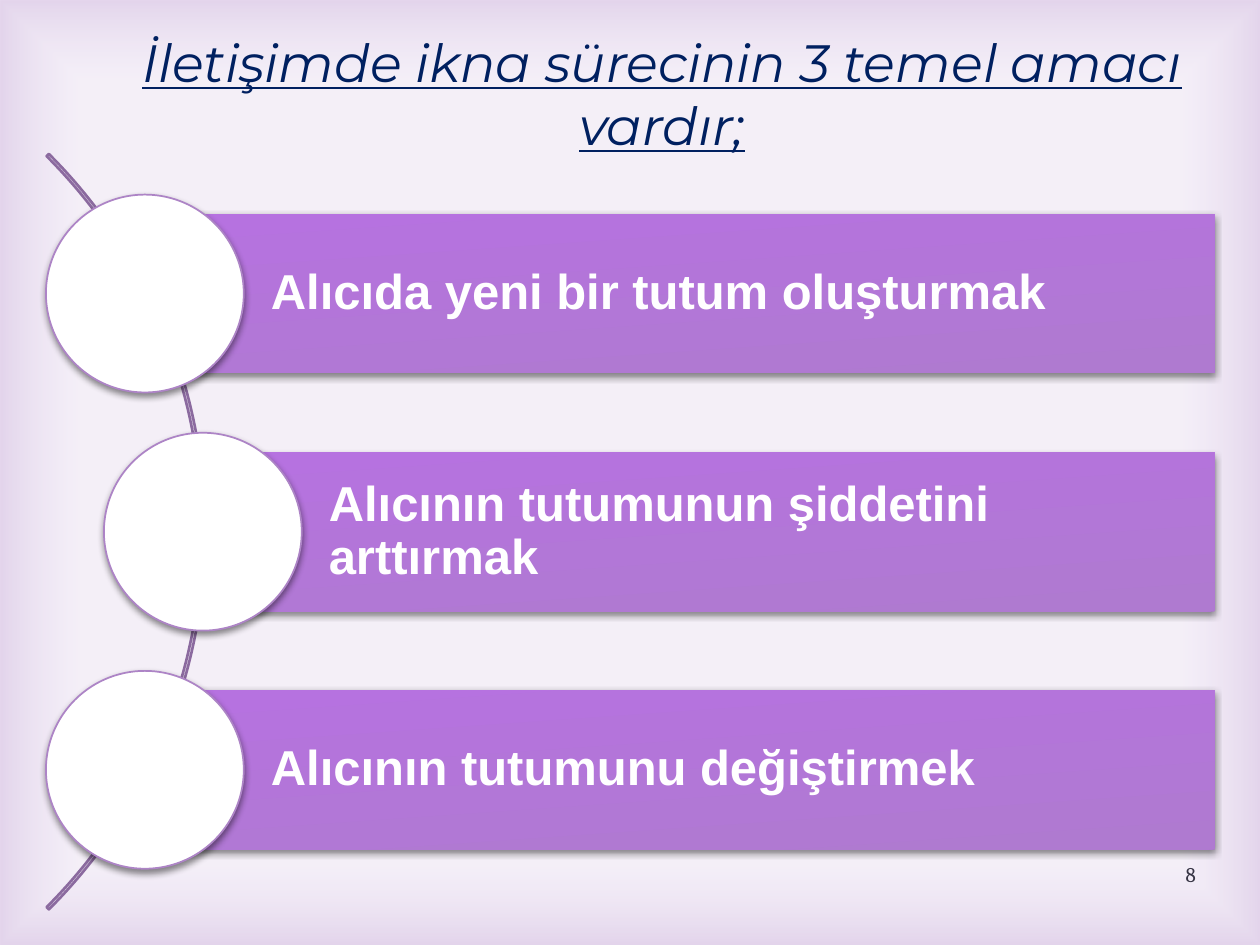
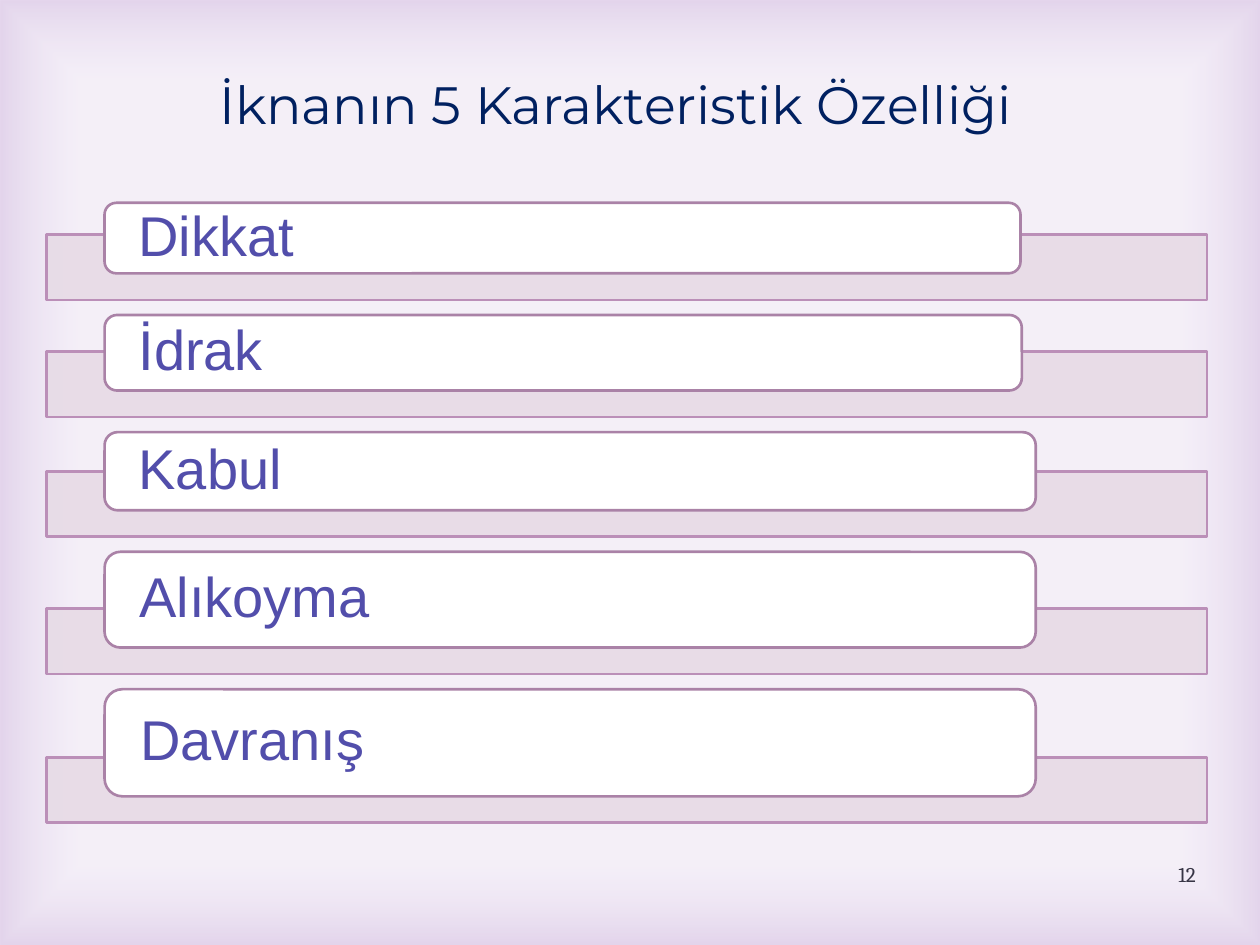
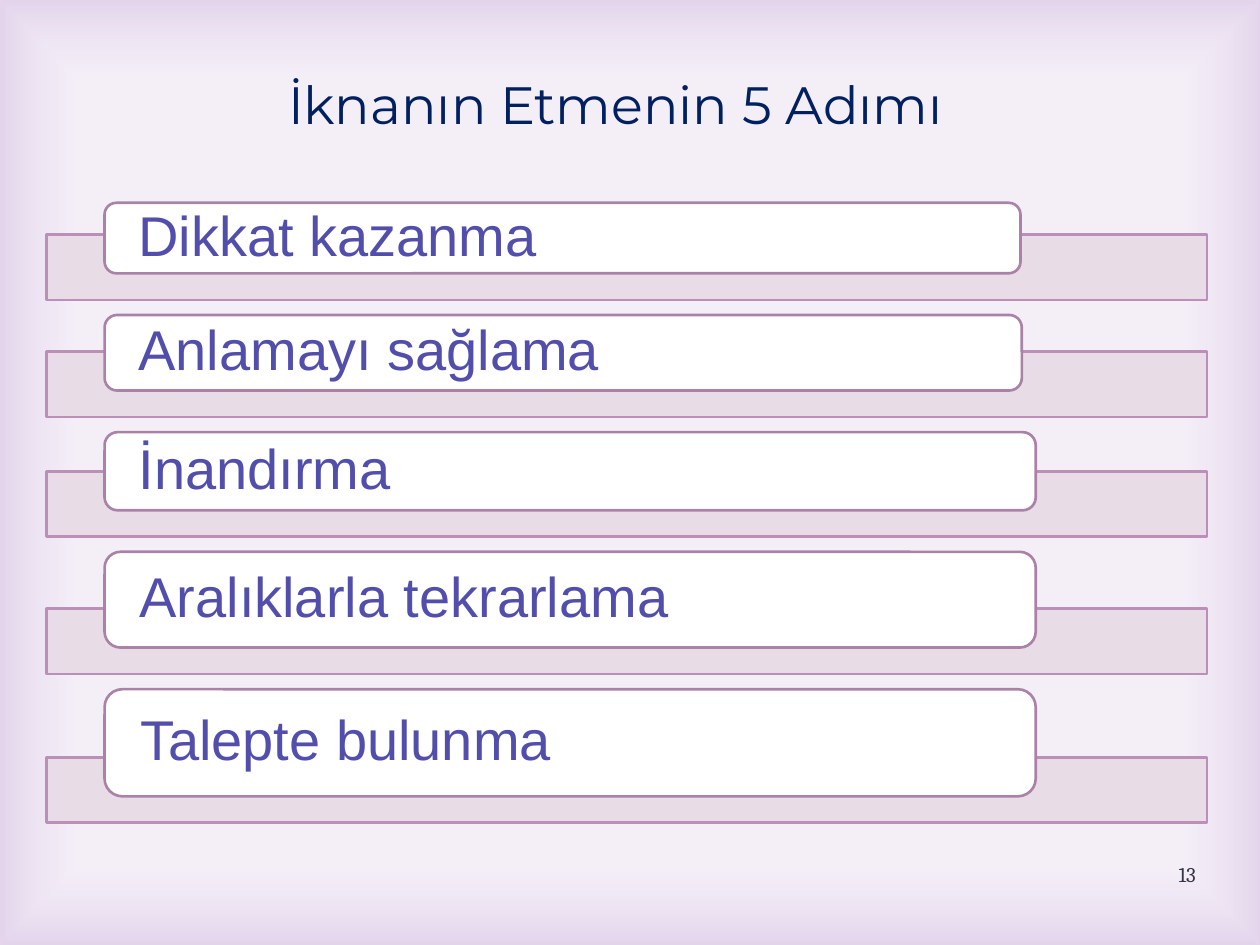
from lxml import etree
from pptx import Presentation
from pptx.dml.color import RGBColor
from pptx.enum.shapes import MSO_SHAPE
from pptx.enum.text import MSO_ANCHOR, MSO_AUTO_SIZE, PP_ALIGN
from pptx.oxml.ns import qn
from pptx.util import Inches, Pt

RECT, ROUND = MSO_SHAPE.RECTANGLE, MSO_SHAPE.ROUNDED_RECTANGLE
OVAL, ARC = MSO_SHAPE.OVAL, MSO_SHAPE.BLOCK_ARC
TOP, MIDDLE = MSO_ANCHOR.TOP, MSO_ANCHOR.MIDDLE
LEFT, CENTER, RIGHT = PP_ALIGN.LEFT, PP_ALIGN.CENTER, PP_ALIGN.RIGHT
NO_FIT = MSO_AUTO_SIZE.NONE

# Content
AIMS = {
    "title": "İletişimde ikna sürecinin 3 temel amacı vardır;",
    "number": "8",
    "items": ["Alıcıda yeni bir tutum oluşturmak",
              "Alıcının tutumunun şiddetini arttırmak",
              "Alıcının tutumunu değiştirmek"],
}
LISTS = [
    {"title": "İknanın 5 Karakteristik Özelliği",
     "number": "12",
     "items": ["Dikkat", "İdrak", "Kabul", "Alıkoyma", "Davranış"]},
    {"title": "İknanın Etmenin 5 Adımı",
     "number": "13",
     "items": ["Dikkat kazanma", "Anlamayı sağlama", "İnandırma",
               "Aralıklarla tekrarlama", "Talepte bulunma"]},
]

# Style
COLORS = {
    "page": "F3EDF7", "white": "FFFFFF", "edge": "AD82C6", "title": "002060",
    "number": "373545", "arc": "8B6A9F", "bar_top": "B672E0",
    "bar_end": "AF7AD0", "ring": "AD84C6", "band": "E7DBE6",
    "band_line": "BB8FB8", "card_line": "AA82A7", "card_text": "524EAB",
}
WIDTH, HEIGHT = 10, 7.5

# Aim bars, in inches
BAR_LEFTS, BAR_RIGHT = [1.15, 1.61, 1.15], 9.64
BAR_TOP, BAR_HEIGHT, BAR_PITCH = 1.7, 1.26, 1.89
DISC = 1.57
ARC_BOX, ARC_ADJUSTMENTS = (-6.85, -0.02, 8.48, 8.48), (189, 27, 0.003)

# List cards, in inches
CARD_LEFT, CARD_TOP, CARD_GAP = 0.83, 1.61, 0.33
CARD_SIZES = [(7.27, 0.56), (7.28, 0.6), (7.39, 0.62), (7.39, 0.76), (7.39, 0.85)]
BAND_LEFT, BAND_WIDTH, BAND_HEIGHT, BAND_OVERLAP = 0.37, 9.21, 0.52, 0.31


def rgb(name):
    return RGBColor.from_string(COLORS[name])


def add_alpha(parent, percent):
    etree.SubElement(parent, qn("a:alpha"), val=str(percent * 1000))


def add_shape(slide, kind, box, fill=None, line=None, width=1.5):
    sp = slide.shapes.add_shape(kind, *map(Inches, box))
    sp.shadow.inherit = False
    if fill:
        sp.fill.solid()
        sp.fill.fore_color.rgb = rgb(fill)
    else:
        sp.fill.background()
    if line:
        sp.line.color.rgb = rgb(line)
        sp.line.width = Pt(width)
    else:
        sp.line.fill.background()
    return sp


def set_gradient(sp, stops):
    sp.fill.gradient()
    for stop, (position, color) in zip(sp.fill.gradient_stops, stops):
        stop.position = position
        stop.color.rgb = rgb(color)


def add_shadow(sp, alpha):
    effects = sp.element.spPr.find(qn("a:effectLst"))
    shadow = etree.SubElement(effects, qn("a:outerShdw"), blurRad=str(Pt(4)),
                              dist=str(Pt(2)), dir="5400000", rotWithShape="0")
    add_alpha(etree.SubElement(shadow, qn("a:srgbClr"), val="000000"), alpha)


def set_text(sp, text, font, size, color, align=LEFT, anchor=MIDDLE,
             insets=(0.1, 0.05, 0.1, 0.05), spacing=1.0, bold=False, fancy=False):
    tf = sp.text_frame
    tf.word_wrap = True
    tf.auto_size = NO_FIT
    tf.vertical_anchor = anchor
    (tf.margin_left, tf.margin_top,
     tf.margin_right, tf.margin_bottom) = map(Inches, insets)
    p = tf.paragraphs[0]
    p.alignment = align
    p.line_spacing = spacing
    r = p.add_run()
    r.text = text
    r.font.name = font
    r.font.size = Pt(size)
    r.font.bold = bold
    r.font.italic = r.font.underline = fancy
    r.font.color.rgb = rgb(color)


def style_layout(layout, slide):
    """Give the layout its page colour and a soft frame."""
    layout.background.fill.solid()
    layout.background.fill.fore_color.rgb = rgb("page")
    frame = add_shape(slide, RECT, (0, 0, WIDTH, HEIGHT))
    set_gradient(frame, [(0.83, "white"), (1, "edge")])
    grad = frame.element.spPr.find(qn("a:gradFill"))
    for color, alpha in zip(grad.iter(qn("a:srgbClr")), (11, 23)):
        add_alpha(color, alpha)
    path = etree.Element(qn("a:path"), path="rect")
    etree.SubElement(path, qn("a:fillToRect"), l="50000", t="50000",
                     r="50000", b="50000")
    grad.replace(grad.find(qn("a:lin")), path)
    layout.shapes.element.insert(2, frame.element)


def add_heading(slide, content, box, fancy=False):
    title = slide.shapes.title
    title.left, title.top, title.width, title.height = map(Inches, box)
    set_text(title, content["title"], "Montserrat", 30, "title", CENTER, TOP,
             fancy=fancy)
    number = slide.shapes.add_textbox(*map(Inches, (7.26, 6.74, 2.33, 0.4)))
    set_text(number, content["number"], "Cambria", 12, "number", RIGHT)


def fill_aims(slide):
    add_heading(slide, AIMS, (0.65, 0.19, 9.21, 1.11), fancy=True)
    arc = add_shape(slide, ARC, ARC_BOX, line="arc")
    for i, value in enumerate(ARC_ADJUSTMENTS):
        arc.adjustments[i] = value
    for i, (text, left) in enumerate(zip(AIMS["items"], BAR_LEFTS)):
        top = BAR_TOP + i * BAR_PITCH
        bar = add_shape(slide, RECT, (left, top, BAR_RIGHT - left, BAR_HEIGHT))
        set_gradient(bar, [(0, "bar_top"), (1, "bar_end")])
        bar.fill.gradient_angle = 360 - 86
        add_shadow(bar, 48)
        set_text(bar, text, "Arial", 28, "white", insets=(1, 0.08, 0.08, 0.08),
                 spacing=0.9, bold=True)
        # Disc centred on the left end of the bar
        disc_top = top + (BAR_HEIGHT - DISC) / 2
        disc = add_shape(slide, OVAL, (left - DISC / 2, disc_top, DISC, DISC),
                         "white", "ring", 1)
        add_shadow(disc, 46)


def fill_list(slide, content):
    add_heading(slide, content, (0.28, 0.52, 9.21, 0.61))
    top = CARD_TOP
    for text, (width, height) in zip(content["items"], CARD_SIZES):
        bottom = top + height
        band = add_shape(slide, RECT, (BAND_LEFT, bottom - BAND_OVERLAP,
                                       BAND_WIDTH, BAND_HEIGHT), "band", "band_line")
        add_alpha(band.element.spPr.find(qn("a:solidFill"))[0], 90)
        card = add_shape(slide, ROUND, (CARD_LEFT, top, width, height),
                         "white", "card_line")
        set_text(card, text, "Arial", 32, "card_text",
                 insets=(0.24, 0, 0.24, 0), spacing=0.9)
        top = bottom + CARD_GAP


def main():
    prs = Presentation()
    prs.slide_width, prs.slide_height = Inches(WIDTH), Inches(HEIGHT)
    layout = prs.slide_layouts[5]
    aims = prs.slides.add_slide(layout)
    style_layout(layout, aims)
    fill_aims(aims)
    for content in LISTS:
        fill_list(prs.slides.add_slide(layout), content)
    prs.save("out.pptx")


if __name__ == "__main__":
    main()
